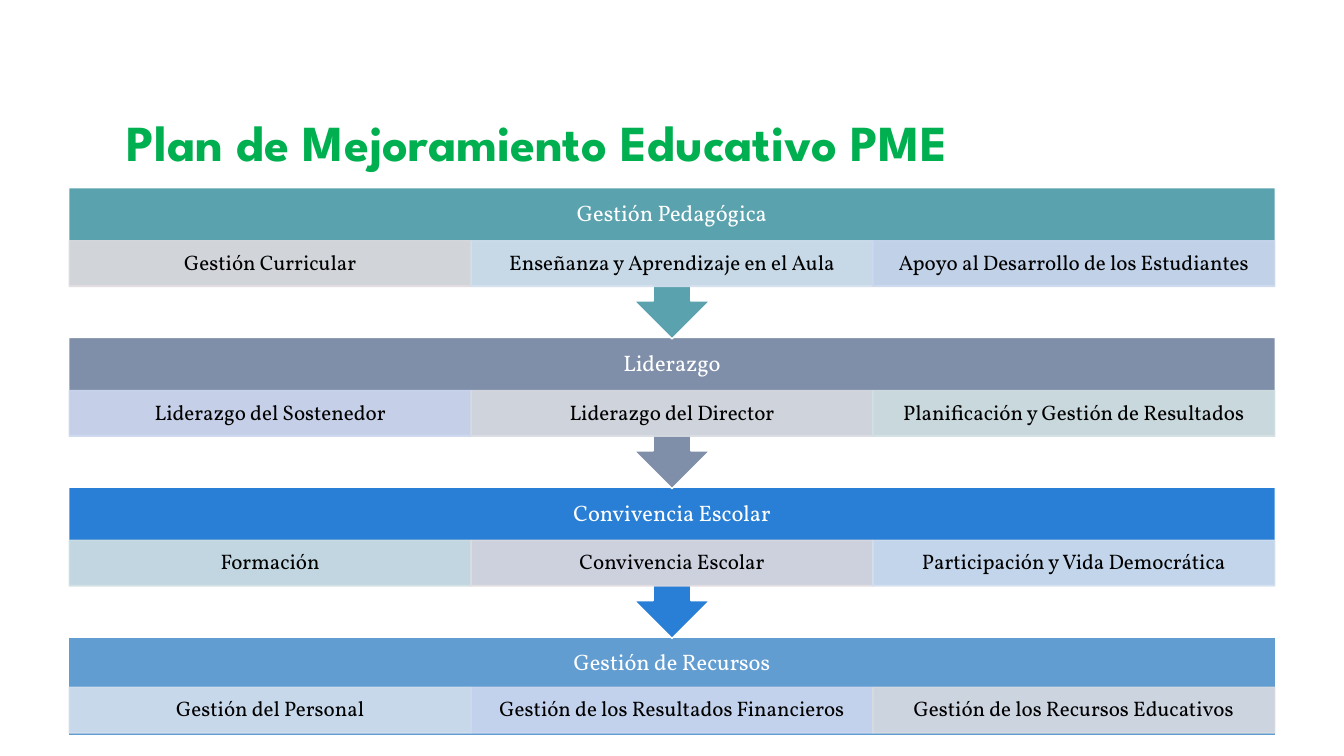
from lxml import etree
from pptx import Presentation
from pptx import util as u
from pptx.dml.color import RGBColor
from pptx.enum import shapes, text
from pptx.oxml.ns import qn

COLORS = {
    "title": "00B050", "white": "FFFFFF", "black": "000000",
    "teal": "5AA2AE", "slate": "7F8FA9", "blue": "297FD5", "sky": "629DD1",
    "pale_blue": "D3DFEE", "pale_indigo": "CDD8EF", "pale_slate": "D8DBE2",
    "pale_teal": "D2E0E3", "pale_mauve": "DFDBDF",
}
AREAS = [
    ("Gestión Pedagógica", "teal", [
        ("Gestión Curricular", "pale_mauve"),
        ("Enseñanza y Aprendizaje en el Aula", "pale_blue"),
        ("Apoyo al Desarrollo de los Estudiantes", "pale_indigo")]),
    ("Liderazgo", "slate", [
        ("Liderazgo del Sostenedor", "pale_indigo"),
        ("Liderazgo del Director", "pale_slate"),
        ("Planificación y Gestión de Resultados", "pale_teal")]),
    ("Convivencia Escolar", "blue", [
        ("Formación", "pale_teal"),
        ("Convivencia Escolar", "pale_mauve"),
        ("Participación y Vida Democrática", "pale_blue")]),
    ("Gestión de Recursos", "sky", [
        ("Gestión del Personal", "pale_blue"),
        ("Gestión de los Resultados Financieros", "pale_indigo"),
        ("Gestión de los Recursos Educativos", "pale_slate")]),
]
LEFT, TOP, WIDTH, PITCH = 49, 134, 862, 107
HEADER_H, CELL_W, CELL_H = 38, 287, 32.6

prs = Presentation()
prs.slide_width, prs.slide_height = u.Pt(960), u.Pt(540)
s = prs.slides.add_slide(prs.slide_layouts[6])


def add_block(kind, box, fill, line, opacity=100):
    sp = s.shapes.add_shape(kind, *[u.Pt(v) for v in box])
    sp.shadow.inherit = False
    sp.line.width = u.Pt(1)
    sp.fill.solid()
    sp.fill.fore_color.rgb = RGBColor.from_string(COLORS[fill])
    sp.line.color.rgb = RGBColor.from_string(COLORS[line])
    if opacity < 100:
        for color in sp._element.spPr.iter(qn("a:srgbClr")):
            etree.SubElement(color, qn("a:alpha"), val=str(opacity * 1000))
    return sp


def write(sp, words, font, size, color, inset_x, inset_y, spacing=0.9,
          anchor=text.MSO_ANCHOR.MIDDLE, align=text.PP_ALIGN.CENTER, bold=False):
    tf = sp.text_frame
    tf.word_wrap = True
    tf.vertical_anchor = anchor
    tf.margin_left = tf.margin_right = u.Pt(inset_x)
    tf.margin_top = tf.margin_bottom = u.Pt(inset_y)
    p = tf.paragraphs[0]
    p.alignment = align
    p.line_spacing = spacing
    r = p.add_run()
    r.text = words
    r.font.name, r.font.size, r.font.bold = font, u.Pt(size), bold
    r.font.color.rgb = RGBColor.from_string(COLORS[color])


title = s.shapes.add_textbox(u.Pt(83.5), u.Pt(41.8), u.Pt(684), u.Pt(84.2))
write(title, "Plan de Mejoramiento Educativo PME", "League Spartan", 36, "title",
      7.2, 3.6, 0.8, text.MSO_ANCHOR.BOTTOM, text.PP_ALIGN.LEFT, True)

last = len(AREAS) - 1
for i, (name, color, topics) in reversed(list(enumerate(AREAS))):
    top = TOP + i * PITCH
    if i == last:
        add_block(shapes.MSO_SHAPE.RECTANGLE, (LEFT, top, WIDTH, 70.5), color, "white")
        cell_top = top + 36
    else:
        callout = add_block(shapes.MSO_SHAPE.UP_ARROW_CALLOUT,
                            (LEFT, top, WIDTH, 108), color, "white")
        callout.rotation = 180
        cell_top = top + HEADER_H
    header = s.shapes.add_textbox(u.Pt(LEFT), u.Pt(top), u.Pt(WIDTH), u.Pt(HEADER_H))
    write(header, name, "Vollkorn", 16, "white", 8.9, 8.9)
    for j, (topic, tint) in enumerate(topics):
        cell = add_block(shapes.MSO_SHAPE.RECTANGLE,
                         (LEFT + 0.5 + j * CELL_W, cell_top, CELL_W, CELL_H),
                         tint, tint, 90)
        write(cell, topic, "Vollkorn", 15, "black", 8.9, 1.5)

prs.save("out.pptx")
